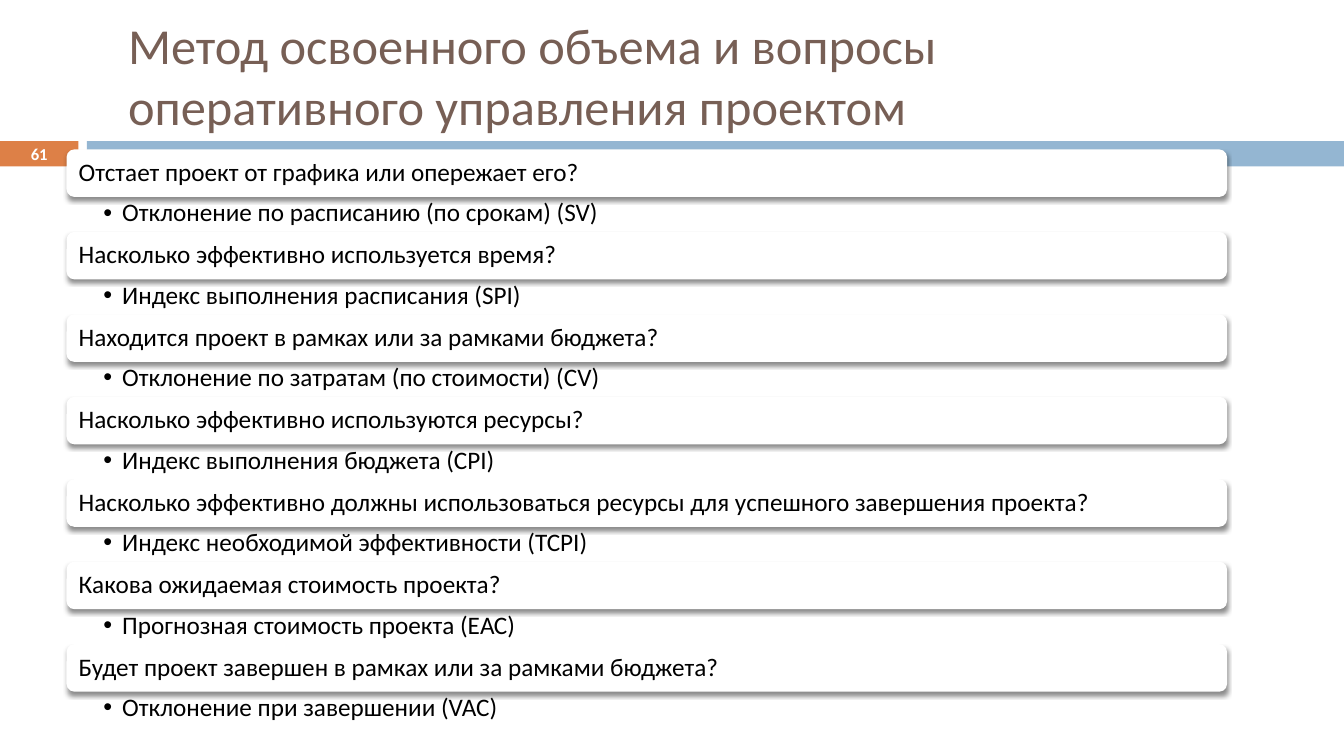
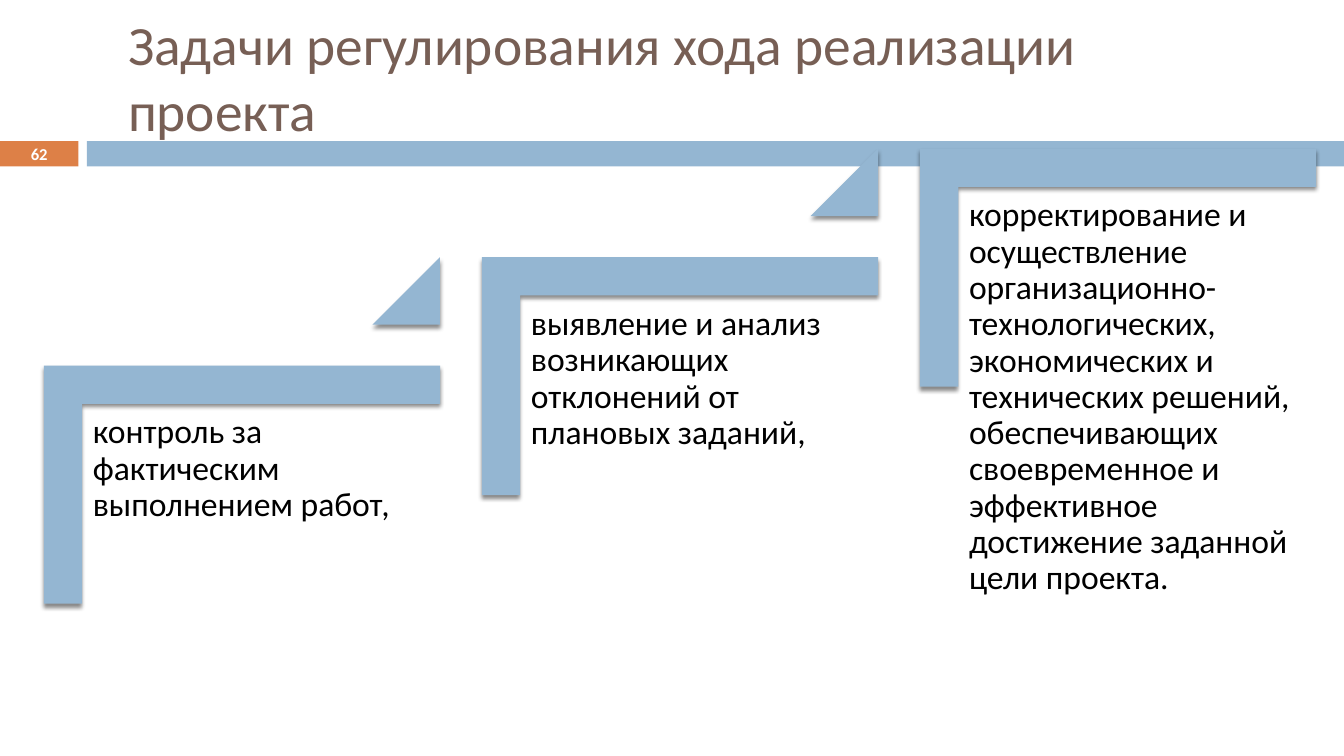
from dataclasses import dataclass

from lxml import etree
from pptx import Presentation
from pptx.dml.color import RGBColor
from pptx.enum import shapes as kinds, text as txt
from pptx.oxml import ns
from pptx.util import Pt


@dataclass(frozen=True)
class Theme:
    font: str = "Calibri"
    title: str = "775F55"
    body: str = "000000"
    light: str = "FFFFFF"
    accent: str = "DD8047"
    band: str = "94B6D2"
    question_size: float = 18
    step_size: float = 24
    number_size: float = 11.9


THEME = Theme()
SLIDE_W, SLIDE_H = 960, 540
BAND_TOP, BAND_H = 100.8, 18
NUMBER_W, BAND_LEFT = 56, 62

QUESTIONS = [
    ("Отстает проект от графика или опережает его?",
     "Отклонение по расписанию (по срокам) (SV)"),
    ("Насколько эффективно используется время?",
     "Индекс выполнения расписания (SPI)"),
    ("Находится проект в рамках или за рамками бюджета?",
     "Отклонение по затратам (по стоимости) (CV)"),
    ("Насколько эффективно используются ресурсы?",
     "Индекс выполнения бюджета (CPI)"),
    ("Насколько эффективно должны использоваться ресурсы для успешного завершения проекта?",
     "Индекс необходимой эффективности (TCPI)"),
    ("Какова ожидаемая стоимость проекта?",
     "Прогнозная стоимость проекта (ЕАС)"),
    ("Будет проект завершен в рамках или за рамками бюджета?",
     "Отклонение при завершении (VAC)"),
]

STEPS = [
    "контроль за фактическим выполнением работ,",
    "выявление и анализ возникающих отклонений от плановых заданий,",
    "корректирование и осуществление организационно-технологических, "
    "экономических и технических решений, обеспечивающих своевременное и "
    "эффективное достижение заданной цели проекта.",
]


def box(left, top, width, height):
    return Pt(left), Pt(top), Pt(width), Pt(height)


def write(holder, text, *, size, color=THEME.body, bold=False, align=txt.PP_ALIGN.LEFT,
          anchor=txt.MSO_ANCHOR.TOP, insets=(7.2, 3.6, 7.2, 3.6), spacing=1.0,
          bullet_indent=None):
    """Fill a shape with one formatted paragraph; insets run left, top, right, bottom."""
    frame = holder.text_frame
    frame.word_wrap = True
    frame.auto_size = txt.MSO_AUTO_SIZE.NONE
    frame.vertical_anchor = anchor
    (frame.margin_left, frame.margin_top,
     frame.margin_right, frame.margin_bottom) = box(*insets)
    paragraph = frame.paragraphs[0]
    paragraph.alignment = align
    paragraph.line_spacing = spacing
    run = paragraph.add_run()
    run.text = text
    run.font.name = THEME.font
    run.font.size = Pt(size)
    run.font.bold = bold
    run.font.color.rgb = RGBColor.from_string(color)
    if bullet_indent:
        properties = paragraph._p.get_or_add_pPr()
        properties.set("marL", str(Pt(bullet_indent)))
        properties.set("indent", str(-Pt(bullet_indent)))
        etree.SubElement(properties, ns.qn("a:buFont"), typeface="Arial")
        etree.SubElement(properties, ns.qn("a:buChar"), char="•")


def add_block(slide, kind, place, color, adjustments=(), shadow=False):
    block = slide.shapes.add_shape(kind, *box(*place))
    block.fill.solid()
    block.fill.fore_color.rgb = RGBColor.from_string(color)
    block.line.fill.background()
    for index, value in enumerate(adjustments):
        block.adjustments[index] = value
    block.shadow.inherit = False
    if shadow:
        effects = block.element.spPr.find(ns.qn("a:effectLst"))
        outer = etree.SubElement(effects, ns.qn("a:outerShdw"), blurRad=str(Pt(3)),
                                 dist=str(Pt(2.4)), dir="5400000", rotWithShape="0")
        tint = etree.SubElement(outer, ns.qn("a:srgbClr"), val="000000")
        etree.SubElement(tint, ns.qn("a:alpha"), val="45000")
    return block


def add_text(slide, text, place, **form):
    write(slide.shapes.add_textbox(*box(*place)), text, **form)


def move_bands_to_layout(slide):
    """Draw the two bands and hand them to the layout, so every slide shows them."""
    layout_tree = slide.slide_layout.element.cSld.spTree
    for left, width, color in ((0, NUMBER_W, THEME.accent),
                               (BAND_LEFT, SLIDE_W - BAND_LEFT, THEME.band)):
        band = add_block(slide, kinds.MSO_SHAPE.RECTANGLE,
                         (left, BAND_TOP, width, BAND_H), color)
        layout_tree.append(band.element)


def start_slide(prs, heading, number, *, title_size, title_top):
    slide = prs.slides.add_slide(prs.slide_layouts[5])
    title = slide.shapes.title
    title.left, title.top, title.width, title.height = box(84.24, title_top, 792, 85)
    write(title, heading, size=title_size, color=THEME.title,
          anchor=txt.MSO_ANCHOR.MIDDLE)
    add_text(slide, str(number), (0, 100, NUMBER_W, 19.5), size=THEME.number_size,
             color=THEME.light, bold=True, align=txt.PP_ALIGN.CENTER,
             anchor=txt.MSO_ANCHOR.MIDDLE)
    return slide


def add_questions(slide, left, top, width, height):
    pitch = height / len(QUESTIONS)
    card_h = 34
    for row, (question, answer) in enumerate(QUESTIONS):
        y = top + row * pitch
        card = add_block(slide, kinds.MSO_SHAPE.ROUNDED_RECTANGLE,
                         (left, y, width, card_h), THEME.light, shadow=True)
        write(card, question, size=THEME.question_size, spacing=0.9,
              anchor=txt.MSO_ANCHOR.MIDDLE, insets=(7, 5, 7, 5))
        add_text(slide, answer, (left, y + card_h, width, pitch - card_h),
                 size=THEME.question_size, spacing=0.9, insets=(26.3, 2.3, 10, 2.3),
                 bullet_indent=13.5)


def add_step(slide, text, left, top, width, height, rise, has_next):
    """Draw a corner with its text, and a triangle one rise above if a step follows."""
    # The corner is turned a quarter, so its sides swap around a fixed centre.
    shift = (width - height) / 2
    corner = add_block(slide, kinds.MSO_SHAPE.CORNER,
                       (left + shift, top - shift, height, width), THEME.band,
                       (0.161, 0.161), shadow=True)
    corner.rotation = 90
    indent = 28
    add_text(slide, text, (left + indent, top + indent, width - indent, 224),
             size=THEME.step_size, spacing=0.9, insets=(7.2, 7.2, 7.2, 7.2))
    if has_next:
        side = 48.2
        add_block(slide, kinds.MSO_SHAPE.ISOSCELES_TRIANGLE,
                  (left + width - side, top - rise, side, side), THEME.band, (1,),
                  shadow=True)


def add_staircase(slide, left, top, width, height):
    step_w, step_h = 283, 170
    last = len(STEPS) - 1
    run, rise = (width - step_w) / last, (height - step_h) / last
    for index, text in enumerate(STEPS):
        add_step(slide, text, left + index * run, top + (last - index) * rise,
                 step_w, step_h, rise, index < last)


def main():
    prs = Presentation()
    prs.slide_width, prs.slide_height = Pt(SLIDE_W), Pt(SLIDE_H)

    earned_value = start_slide(
        prs, "Метод освоенного объема и вопросы оперативного управления проектом", 61,
        title_size=36, title_top=10.8)
    move_bands_to_layout(earned_value)
    add_questions(earned_value, 47.5, 106.7, 829, 412.3)

    regulation = start_slide(prs, "Задачи регулирования хода реализации проекта", 62,
                             title_size=39.6, title_top=12.2)
    add_staircase(regulation, 31.3, 106.2, 908.8, 325)

    prs.save("out.pptx")


if __name__ == "__main__":
    main()
